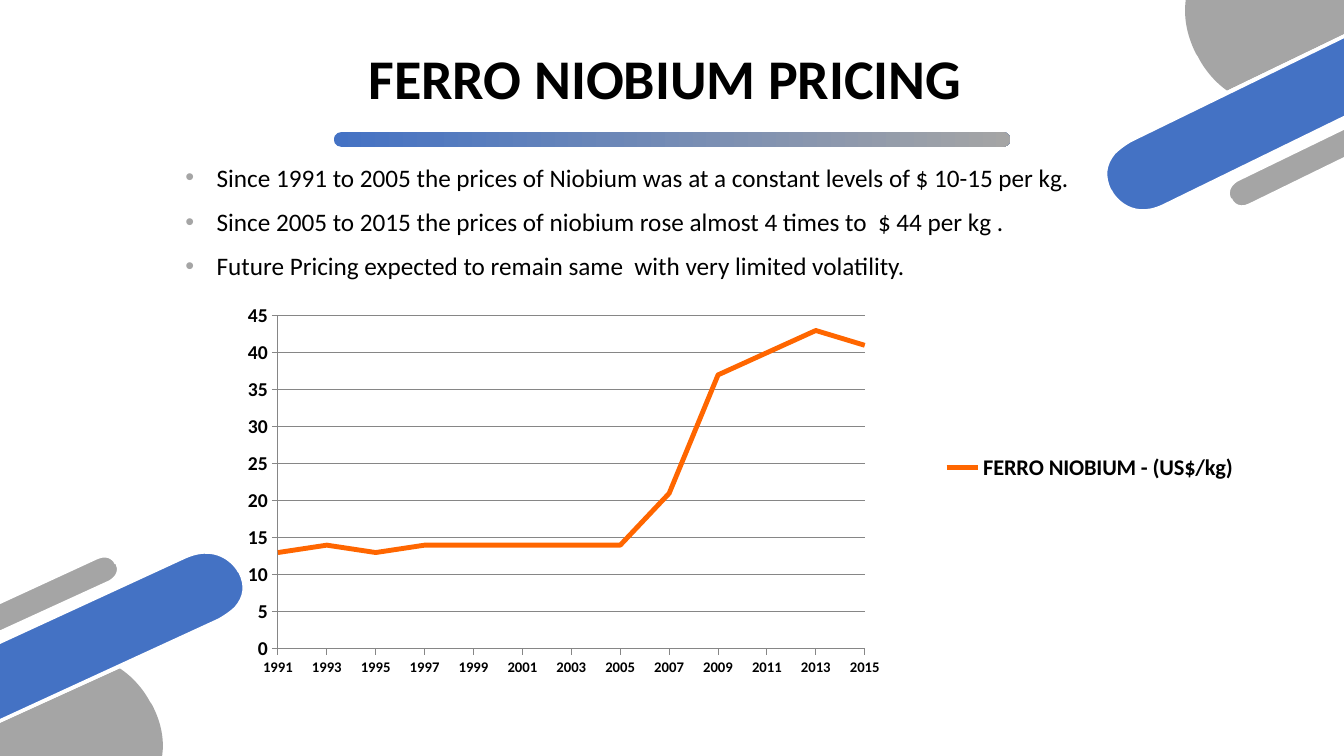
import pptx
import pptx.chart.data
import pptx.dml.color
import pptx.enum.chart
import pptx.enum.shapes
import pptx.enum.text
import pptx.oxml
import pptx.oxml.ns
import pptx.util

Cm = pptx.util.Cm
Pt = pptx.util.Pt
RGBColor = pptx.dml.color.RGBColor
qn = pptx.oxml.ns.qn
DRAWING = pptx.oxml.ns.nsdecls("a")
CHART = pptx.oxml.ns.nsdecls("c")

BLUE = RGBColor(0x44, 0x72, 0xC4)
GREY = RGBColor(0xA5, 0xA5, 0xA5)
WHITE = RGBColor(0xFF, 0xFF, 0xFF)
BLACK = RGBColor(0, 0, 0)
ORANGE = RGBColor(0xFF, 0x66, 0x00)
GRID = RGBColor(0x86, 0x86, 0x86)
FONT = "Calibri"

BULLETS = [
    "Since 1991 to 2005 the prices of Niobium was at a constant levels of $ 10-15 per kg.",
    "Since 2005 to 2015 the prices of niobium rose almost 4 times to  $ 44 per kg .",
    "Future Pricing expected to remain same  with very limited volatility.",
]
YEARS = [str(year) for year in range(1991, 2016, 2)]
PRICES = [13, 14, 13, 14, 14, 14, 14, 14, 21, 37, 40, 43, 41]

MOTIF_SIZE = (239, 212)
MOTIF = [
    (WHITE, [(0, 81), (27, 94), (59, 110, 89, 108, 114, 89), (134, 74, 144, 55, 144, 55),
             (145, 52), (154, 34, 158, 16, 155, 0), (159, 0), (162, 17, 158, 35, 149, 54),
             (147, 57), (147, 58, 137, 77, 117, 92), (105, 101, 89, 109, 68, 109),
             (56, 109, 42, 106, 25, 98), (0, 86)]),
    (BLUE, [(212, 139), (212, 139, 248, 157, 232, 189), (232, 190),
            (232, 190, 216, 222, 179, 204), (0, 117), (0, 36)]),
    (GREY, [(145, 56), (145, 56, 136, 76, 116, 90), (0, 34), (0, 0), (157, 0),
            (159, 15, 157, 33, 147, 53)]),
    (GREY, [(0, 126), (106, 178), (106, 178, 120, 185, 113, 197), (113, 198),
            (113, 198, 107, 211, 93, 204), (0, 158)]),
    (WHITE, [(94, 202), (106, 208, 111, 198, 111, 197), (112, 197),
             (117, 186, 105, 180, 105, 180), (0, 129), (0, 124), (107, 176),
             (107, 176, 114, 180, 116, 187), (118, 191, 117, 195, 115, 199),
             (113, 203, 108, 208, 101, 208), (98, 208, 95, 208, 92, 206), (0, 161), (0, 156)]),
    (WHITE, [(180, 203), (214, 219, 230, 190, 230, 189), (231, 188),
             (237, 175, 236, 164, 227, 153), (220, 146, 211, 141, 211, 141), (0, 38), (0, 34),
             (213, 137), (214, 138, 231, 146, 237, 163), (240, 171, 239, 180, 234, 190),
             (234, 191), (234, 191, 223, 212, 200, 212), (194, 212, 187, 210, 179, 206),
             (0, 119), (0, 115)]),
]


def set_format(target, values):
    for name, value in values.items():
        setattr(target, name, value)


def set_font(font, size, bold=False):
    set_format(font, {"name": FONT, "size": Pt(size), "bold": bold})
    font.color.rgb = BLACK


def bend_segments(shape, segments):
    lines = list(shape._element.iter(qn("a:lnTo")))
    for line, segment in zip(lines, segments[1:]):
        if len(segment) == 1:
            continue
        points = "".join(f'<a:pt x="{x - shape.left}" y="{y - shape.top}"/>'
                         for x, y in segment)
        curve = pptx.oxml.parse_xml(f"<a:cubicBezTo {DRAWING}>{points}</a:cubicBezTo>")
        line.getparent().replace(line, curve)


def add_corner_motif(page, box, bottom_left=False):
    left, top, width, height = box
    unit_x, unit_y = width / MOTIF_SIZE[0], height / MOTIF_SIZE[1]

    def locate(across, down):
        if bottom_left:
            return round(left + across * unit_x), round(top + height - down * unit_y)
        return round(left + width - across * unit_x), round(top + down * unit_y)

    for color, outline in MOTIF:
        segments = [[locate(*pair) for pair in zip(numbers[::2], numbers[1::2])]
                    for numbers in outline]
        ends = [segment[-1] for segment in segments]
        builder = page.shapes.build_freeform(*ends[0])
        builder.add_line_segments(ends[1:])
        shape = builder.convert_to_shape()
        bend_segments(shape, segments)
        shape.shadow.inherit = False
        shape.fill.solid()
        shape.fill.fore_color.rgb = color
        shape.line.fill.background()


def add_title_bar(page, box):
    bar = page.shapes.add_shape(pptx.enum.shapes.MSO_SHAPE.ROUNDED_RECTANGLE, *box)
    bar.adjustments[0] = 0.5
    bar.shadow.inherit = False
    bar.line.fill.background()
    bar.fill.gradient()
    bar.fill.gradient_angle = 0
    for stop, color, position in zip(bar.fill.gradient_stops, (BLUE, GREY), (0, 1)):
        stop.color.rgb = color
        stop.position = position


def add_title(page, box):
    frame = page.shapes.add_textbox(*box).text_frame
    set_format(frame, {"word_wrap": True,
                       "vertical_anchor": pptx.enum.text.MSO_ANCHOR.BOTTOM})
    para = frame.paragraphs[0]
    set_format(para, {"alignment": pptx.enum.text.PP_ALIGN.CENTER, "line_spacing": 0.9})
    span = para.add_run()
    span.text = "FERRO NIOBIUM PRICING "
    set_font(span.font, 40, True)


def add_bullets(page, box):
    frame = page.shapes.add_textbox(*box).text_frame
    frame.word_wrap = True
    for index, text in enumerate(BULLETS):
        para = frame.add_paragraph() if index else frame.paragraphs[0]
        para.space_before = Pt(10)
        span = para.add_run()
        span.text = text
        set_font(span.font, 18)
        properties = para._p.get_or_add_pPr()
        properties.set("marL", str(Cm(0.79)))
        properties.set("indent", str(Cm(-0.79)))
        for xml in (f'<a:buClr {DRAWING}><a:srgbClr val="{GREY}"/></a:buClr>',
                    f'<a:buFont {DRAWING} typeface="Arial"/>',
                    f'<a:buChar {DRAWING} char="•"/>'):
            properties.append(pptx.oxml.parse_xml(xml))


def place_in_chart(parent, after, box, inner=False):
    for old in parent.findall(qn("c:layout")):
        parent.remove(old)
    target = '<c:layoutTarget val="inner"/>' if inner else ""
    modes = '<c:xMode val="edge"/><c:yMode val="edge"/>'
    lengths = "".join(f'<c:{name} val="{value}"/>' for name, value in zip("xywh", box))
    layout = pptx.oxml.parse_xml(f"<c:layout {CHART}><c:manualLayout>"
                                 f"{target}{modes}{lengths}</c:manualLayout></c:layout>")
    if after is None:
        parent.insert(0, layout)
    else:
        after.addnext(layout)


def add_price_chart(page, box):
    data = pptx.chart.data.CategoryChartData()
    data.categories = YEARS
    data.add_series("FERRO NIOBIUM - (US$/kg)", PRICES)
    chart = page.shapes.add_chart(pptx.enum.chart.XL_CHART_TYPE.LINE, *box, data).chart
    set_format(chart, {"has_title": False, "has_legend": True})
    set_font(chart.font, 10)
    chart.plots[0].vary_by_categories = False
    series = chart.plots[0].series[0]
    series.smooth = False
    series.format.line.color.rgb = ORANGE
    series.format.line.width = Pt(3.5)

    for axis, size in ((chart.category_axis, 10.5), (chart.value_axis, 14)):
        axis.major_tick_mark = pptx.enum.chart.XL_TICK_MARK.OUTSIDE
        axis.format.line.color.rgb = GRID
        set_font(axis.tick_labels.font, size, True)
    values = chart.value_axis
    set_format(values, {"minimum_scale": 0, "maximum_scale": 45, "major_unit": 5,
                        "has_major_gridlines": True})
    values.major_gridlines.format.line.color.rgb = GRID
    for old in values._element.findall(qn("c:crossBetween")):
        values._element.remove(old)
    values._element.find(qn("c:crosses")).addnext(
        pptx.oxml.parse_xml(f'<c:crossBetween {CHART} val="midCat"/>'))

    legend = chart.legend
    set_format(legend, {"position": pptx.enum.chart.XL_LEGEND_POSITION.RIGHT,
                        "include_in_layout": False})
    set_font(legend.font, 16, True)
    place_in_chart(legend._element, legend._element.find(qn("c:legendPos")),
                   (0.678, 0.408, 0.29, 0.08))
    plot_area = chart._chartSpace.find(qn("c:chart")).find(qn("c:plotArea"))
    place_in_chart(plot_area, None, (0.069, 0.157, 0.545, 0.638), inner=True)


def main():
    deck = pptx.Presentation()
    set_format(deck, {"slide_width": Cm(33.86), "slide_height": Cm(19.05)})
    page = deck.slides.add_slide(deck.slide_layouts[6])
    page.background.fill.solid()
    page.background.fill.fore_color.rgb = WHITE
    add_title_bar(page, (Cm(8.41), Cm(3.33), Cm(17.04), Cm(0.37)))
    add_corner_motif(page, (Cm(27.79), Cm(0), Cm(6.07), Cm(5.38)))
    add_corner_motif(page, (Cm(0), Cm(13.85), Cm(6.22), Cm(5.2)), bottom_left=True)
    add_title(page, (Cm(2.31), Cm(1.07), Cm(29.21), Cm(1.88)))
    add_bullets(page, (Cm(4.42), Cm(3.96), Cm(24.23), Cm(3.63)))
    add_price_chart(page, (Cm(5.13), Cm(5.89), Cm(27.13), Cm(13.16)))
    deck.save("out.pptx")


if __name__ == "__main__":
    main()
